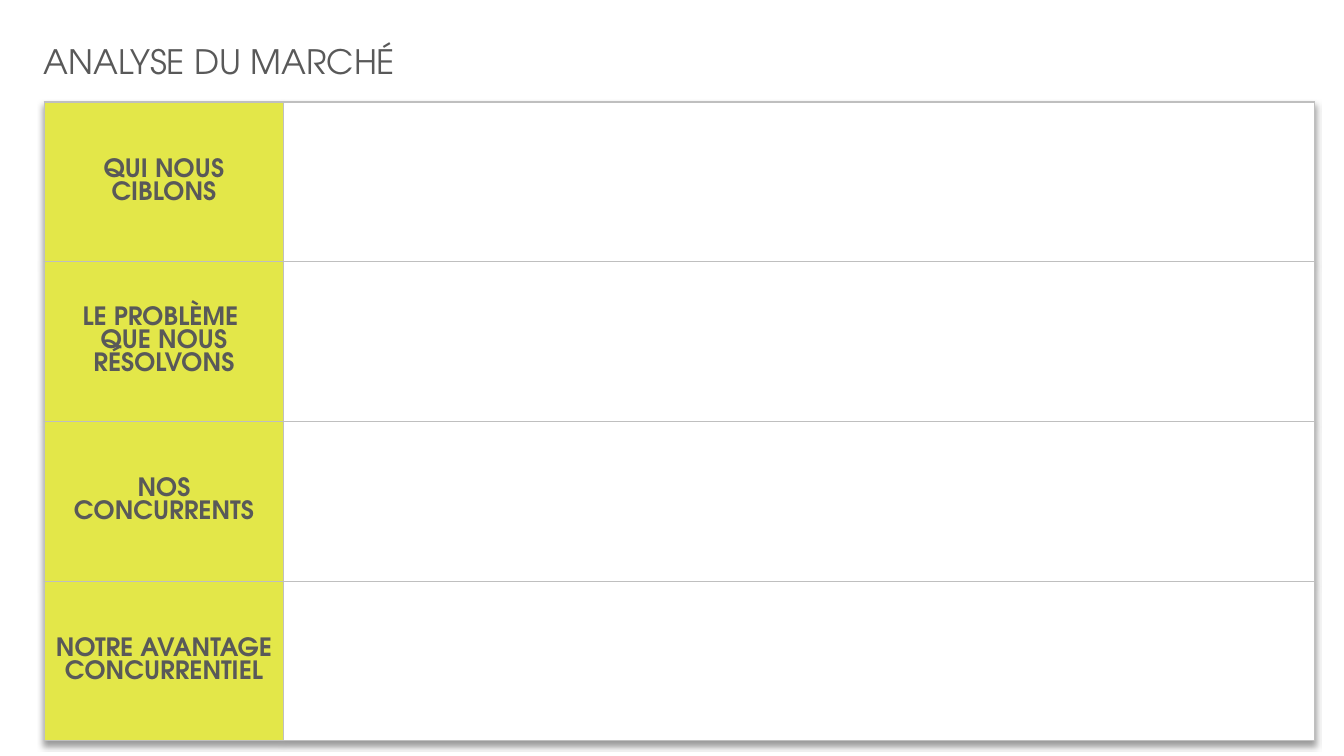
import dataclasses

import lxml.etree
import pptx
import pptx.dml.color
import pptx.enum.text
import pptx.oxml.ns
import pptx.util


@dataclasses.dataclass(frozen=True)
class Theme:
    """Colours, font and type sizes of the slide."""
    font: str = "TeX Gyre Adventor"
    text: str = "595959"
    label: str = "E3E749"
    blank: str = "FFFFFF"
    border: str = "BFBFBF"
    shadow: str = "000000"
    title_size: int = 24
    label_size: int = 18


class SlideBuilder:
    """Places styled elements on a slide with a grid of 100 columns and 100 rows."""

    def __init__(self, prs, theme):
        """Add a slide that has only a title."""
        self.theme = theme
        self.col = prs.slide_width / 100
        self.row = prs.slide_height / 100
        self.slide = prs.slides.add_slide(prs.slide_layouts[5])

    def box(self, left, top, width, height):
        """Turn grid columns and rows into lengths."""
        return (round(left * self.col), round(top * self.row),
                round(width * self.col), round(height * self.row))

    def set_text(self, tf, text, size, align, bold=False):
        """Set one styled paragraph."""
        p = tf.paragraphs[0]
        p.text = text
        p.alignment = align
        for r in p.runs:
            r.font.name = self.theme.font
            r.font.size = pptx.util.Pt(size)
            r.font.bold = bold
            r.font.color.rgb = pptx.dml.color.RGBColor.from_string(self.theme.text)

    def title(self, text, *area):
        """Move and fill the title placeholder."""
        sp = self.slide.shapes.title
        sp.left, sp.top, sp.width, sp.height = self.box(*area)
        tf = sp.text_frame
        tf.word_wrap = True
        tf.auto_size = pptx.enum.text.MSO_AUTO_SIZE.NONE
        tf.vertical_anchor = pptx.enum.text.MSO_ANCHOR.MIDDLE
        self.set_text(tf, text, self.theme.title_size, pptx.enum.text.PP_ALIGN.LEFT)

    def element(self, parent, tag, **attrs):
        """Append a DrawingML element."""
        return lxml.etree.SubElement(parent, pptx.oxml.ns.qn(tag), **attrs)

    def cell(self, cell, fill):
        """Give a cell its borders and fill."""
        tcPr = cell._tc.get_or_add_tcPr()
        for side in "LRTB":
            ln = self.element(tcPr, f"a:ln{side}", w=str(pptx.util.Pt(1)))
            solid = self.element(ln, "a:solidFill")
            self.element(solid, "a:srgbClr", val=self.theme.border)
        cell.fill.solid()
        cell.fill.fore_color.rgb = pptx.dml.color.RGBColor.from_string(fill)
        cell.vertical_anchor = pptx.enum.text.MSO_ANCHOR.MIDDLE

    def shadow(self, table):
        """Add a soft shadow below a table."""
        effects = lxml.etree.Element(pptx.oxml.ns.qn("a:effectLst"))
        table._tbl.tblPr.insert(0, effects)
        outer = self.element(effects, "a:outerShdw", blurRad="50800",
                             dist="38100", dir="5400000", algn="t", rotWithShape="0")
        color = self.element(outer, "a:srgbClr", val=self.theme.shadow)
        self.element(color, "a:alpha", val="40000")

    def label_table(self, labels, label_width, *area):
        """Add a table with labels on the left and blank cells on the right."""
        left, top, width, height = self.box(*area)
        table = self.slide.shapes.add_table(
            len(labels), 2, left, top, width, height).table
        table.first_row = table.horz_banding = False
        table.columns[0].width = round(label_width * self.col)
        table.columns[1].width = width - table.columns[0].width
        for i, label in enumerate(labels):
            self.cell(table.cell(i, 0), self.theme.label)
            self.cell(table.cell(i, 1), self.theme.blank)
            self.set_text(table.cell(i, 0).text_frame, label, self.theme.label_size,
                          pptx.enum.text.PP_ALIGN.CENTER, bold=True)
        self.shadow(table)


def main():
    """Build and save the market analysis slide."""
    prs = pptx.Presentation()
    prs.slide_width = pptx.util.Inches(13.33)
    prs.slide_height = pptx.util.Inches(7.5)
    builder = SlideBuilder(prs, Theme())
    builder.title("ANALYSE DU MARCHÉ", 2.5, 4.7, 60.6, 6.7)
    labels = ["QUI NOUS CIBLONS", "LE PROBLÈME \vQUE NOUS RÉSOLVONS",
              "NOS CONCURRENTS", "NOTRE AVANTAGE CONCURRENTIEL"]
    builder.label_table(labels, 17.8, 3.3, 13.5, 94.5, 84.5)
    prs.save("out.pptx")


if __name__ == "__main__":
    main()
